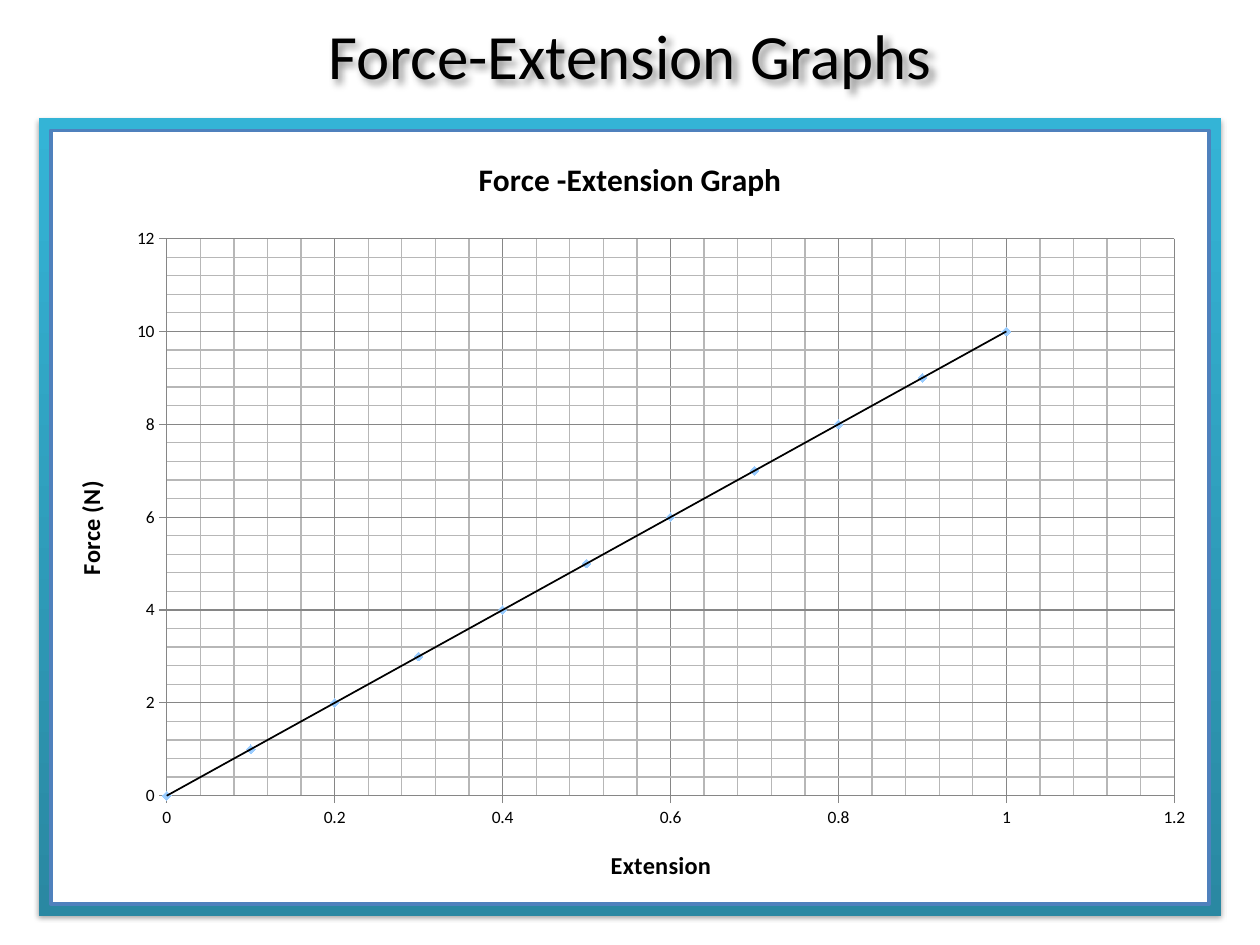
"""Build a slide with a force-extension scatter chart in a framed panel."""
from lxml import etree
from pptx import Presentation, util as u
from pptx.chart import data
from pptx.dml import color
from pptx.enum import chart as kinds, shapes, text
from pptx.oxml import ns

HEADING = "Force-Extension Graphs"
CHART_TITLE = "Force -Extension Graph"
FONT = "Calibri"
COLORS = {"text": "000000", "frame_low": "2A88A2", "frame_high": "34B4D6",
          "border": "4F81BD", "paper": "FFFFFF", "marker": "99CCFF",
          "major": "868686", "minor": "B7B7B7", "outline": "323232"}
POINTS = [(step / 10, step) for step in range(11)]
AXES = {"category_axis": ("Extension", 1.2, 0.2), "value_axis": ("Force (N)", 12, 2)}
PLOT = {"x": 0.1, "y": 0.14, "w": 0.87, "h": 0.72}
WIDTH, HEIGHT = 10, 7.5
MARGIN, BORDER = 0.31, 0.08
FRAME = (MARGIN, 0.94, WIDTH - 2 * MARGIN, 6.33)
TITLE_BOX = (MARGIN, 0.08, WIDTH - 2 * MARGIN, 0.7)
CHART_BOX = (FRAME[0] + BORDER, FRAME[1] + BORDER,
             FRAME[2] - 2 * BORDER, FRAME[3] - 2 * BORDER)
NAMESPACES = " ".join(f'xmlns:{prefix}="{ns.nsuri(prefix)}"' for prefix in "ac")


def inches(box):
    return [u.Inches(length) for length in box]


def rgb(name):
    return color.RGBColor.from_string(COLORS[name])


def element(tag, body):
    return etree.fromstring(f"<{tag} {NAMESPACES}>{body}</{tag}>")


def solid(name):
    return f'<a:solidFill><a:srgbClr val="{COLORS[name]}"/></a:solidFill>'


def line(name, points):
    return f'<a:ln w="{u.Pt(points)}">{solid(name)}</a:ln>'


def add_shadow(shape, blur, distance, angle, opacity):
    shape._element.spPr.append(element("a:effectLst", (
        f'<a:outerShdw blurRad="{u.Pt(blur)}" dist="{u.Pt(distance)}" '
        f'dir="{angle * 60000}" algn="tl" rotWithShape="0"><a:srgbClr val="000000">'
        f'<a:alpha val="{opacity * 1000}"/></a:srgbClr></a:outerShdw>')))


def style_font(font, size, bold=False):
    font.name, font.size, font.bold = FONT, u.Pt(size), bold
    font.color.rgb = rgb("text")


def add_title(frame, words, size):
    run = frame.paragraphs[0].add_run()
    run.text = words
    style_font(run.font, size, True)


def add_frame(slide):
    frame = slide.shapes.add_shape(shapes.MSO_SHAPE.RECTANGLE, *inches(FRAME))
    frame.line.fill.background()
    frame.fill.gradient()
    frame.fill.gradient_angle = 90
    for stop, name in zip(frame.fill.gradient_stops, ("frame_low", "frame_high")):
        stop.color.rgb = rgb(name)
    add_shadow(frame, 3.1, 1.8, 90, 35)


def add_heading(slide):
    box = slide.shapes.add_textbox(*inches(TITLE_BOX))
    frame = box.text_frame
    frame.word_wrap = True
    frame.vertical_anchor = text.MSO_ANCHOR.MIDDLE
    paragraph = frame.paragraphs[0]
    paragraph.alignment = text.PP_ALIGN.CENTER
    run = paragraph.add_run()
    run.text = HEADING
    style_font(run.font, 36)
    outline = element("a:ln", solid("outline"))
    outline.set("w", str(u.Pt(1)))
    run._r.get_or_add_rPr().insert(0, outline)
    add_shadow(box, 4, 3, 45, 45)


def style_axis(axis, title, maximum, unit):
    axis.minimum_scale, axis.maximum_scale = 0, maximum
    axis.major_unit, axis.minor_unit = unit, round(unit / 5, 2)
    axis.has_major_gridlines = axis.has_minor_gridlines = True
    axis.major_tick_mark = kinds.XL_TICK_MARK.OUTSIDE
    axis.minor_tick_mark = kinds.XL_TICK_MARK.NONE
    axis.tick_labels.number_format = "General"
    axis.tick_labels.number_format_is_linked = False
    style_font(axis.tick_labels.font, 10)
    add_title(axis.axis_title.text_frame, title, 14)
    for stroke in (axis.format.line, axis.major_gridlines.format.line):
        stroke.color.rgb, stroke.width = rgb("major"), u.Pt(0.75)
    minor = axis._element.find(ns.qn("c:minorGridlines"))
    minor.append(element("c:spPr", line("minor", 0.75)))


def style_series(series):
    series.format.line.fill.background()
    marker = series.marker
    marker.style, marker.size = kinds.XL_MARKER_STYLE.DIAMOND, 5
    marker.format.fill.solid()
    marker.format.fill.fore_color.rgb = rgb("marker")
    marker.format.line.fill.background()
    series._element.find(ns.qn("c:xVal")).addprevious(element("c:trendline", (
        f'<c:spPr>{line("text", 1)}</c:spPr><c:trendlineType val="linear"/>'
        '<c:dispRSqr val="0"/><c:dispEq val="0"/>')))


def place_plot(chart):
    area = chart._chartSpace.chart.plotArea
    for layout in area.findall(ns.qn("c:layout")):
        area.remove(layout)
    modes = '<c:layoutTarget val="inner"/><c:xMode val="edge"/><c:yMode val="edge"/>'
    shares = "".join(f'<c:{key} val="{share}"/>' for key, share in PLOT.items())
    area.insert(0, element("c:layout", f"<c:manualLayout>{modes}{shares}</c:manualLayout>"))


def add_graph(slide):
    values = data.XyChartData()
    series = values.add_series("Series 1")
    for extension, force in POINTS:
        series.add_data_point(extension, force)
    chart = slide.shapes.add_chart(
        kinds.XL_CHART_TYPE.XY_SCATTER, *inches(CHART_BOX), values).chart
    style_font(chart.font, 10)
    chart.has_legend = False
    chart.plots[0].vary_by_categories = False
    add_title(chart.chart_title.text_frame, CHART_TITLE, 18)
    chart.chart_title.include_in_layout = False
    for name, settings in AXES.items():
        style_axis(getattr(chart, name), *settings)
    style_series(chart.plots[0].series[0])
    place_plot(chart)
    chart._chartSpace.chart.addnext(
        element("c:spPr", solid("paper") + line("border", 2)))


def main():
    presentation = Presentation()
    presentation.slide_width, presentation.slide_height = inches((WIDTH, HEIGHT))
    slide = presentation.slides.add_slide(presentation.slide_layouts[6])
    slide.background.fill.solid()
    slide.background.fill.fore_color.rgb = rgb("paper")
    add_frame(slide)
    add_heading(slide)
    add_graph(slide)
    presentation.save("out.pptx")


if __name__ == "__main__":
    main()
